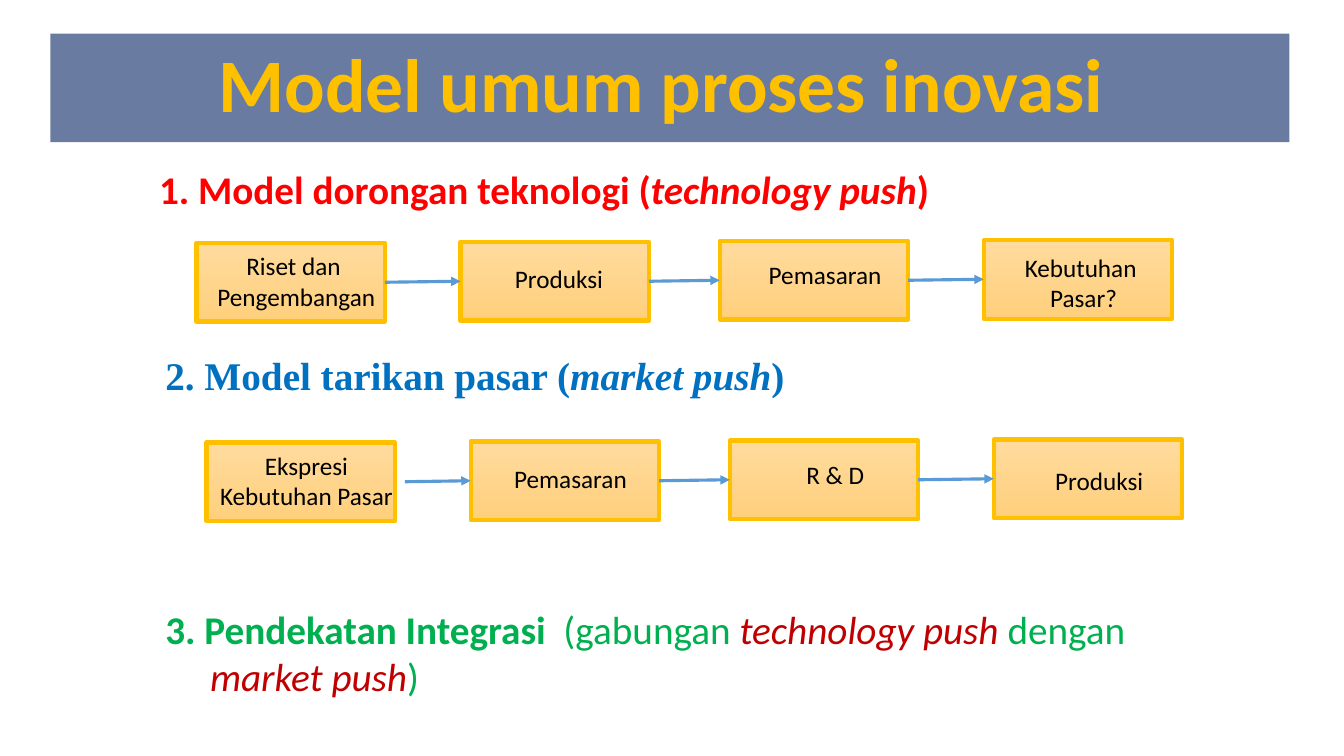
from lxml.etree import SubElement
from pptx import Presentation
from pptx.dml.color import RGBColor
from pptx.enum.shapes import MSO_CONNECTOR, MSO_SHAPE
from pptx.enum.text import MSO_ANCHOR, PP_ALIGN
from pptx.oxml.ns import qn
from pptx.util import Pt

NAVY = RGBColor(0x00, 0x20, 0x60)
GOLD = RGBColor(0xFF, 0xC0, 0x00)
CREAM = RGBColor(0xFF, 0xDB, 0x9E)
AMBER = RGBColor(0xFF, 0xD0, 0x7C)
SKY = RGBColor(0x5B, 0x9B, 0xD5)
BLACK = RGBColor(0, 0, 0)
RED = RGBColor(0xFF, 0, 0)
BLUE = RGBColor(0x00, 0x70, 0xC0)
GREEN = RGBColor(0x00, 0xB0, 0x50)
MAROON = RGBColor(0xC0, 0, 0)

# Content: headings are (left, top, width, height), font, alignment, paragraphs;
# each paragraph is (indent, runs) and each run is text, colour, bold, italic
TITLE = "Model umum proses inovasi "
HEADINGS = [
    ((106.5, 114.5, 782, 41), "Calibri", PP_ALIGN.LEFT, [
        (0, [("1. Model dorongan teknologi (", RED, True, False),
             ("technology push", RED, True, True),
             (")", RED, True, False)])]),
    ((111, 247.7, 477, 41), "Times New Roman", PP_ALIGN.LEFT, [
        (0, [("2. Model tarikan pasar (", BLUE, True, False),
             ("market push", BLUE, True, True),
             (")", BLUE, True, False)])]),
    ((111, 429, 734, 75), "Calibri", PP_ALIGN.JUSTIFY, [
        (0, [("3. Pendekatan Integrasi  ", GREEN, True, False),
             ("(gabungan ", GREEN, False, False),
             ("technology push ", MAROON, False, True),
             ("dengan", GREEN, False, False)]),
        (32, [("market push", MAROON, False, True),
              (")", GREEN, False, False)])]),
]
# Each flow: left, top, gap before its first arrow, steps;
# each step is text and its offset from the box centre
FLOWS = [
    (140.4, 173.5, 0, [("Riset dan \nPengembangan", 4, -1), ("Produksi", 3, -2),
                       ("Pemasaran", 8, -4), ("Kebutuhan \nPasar?", 4, 2)]),
    (147.6, 316, 7, [("Ekspresi\nKebutuhan Pasar", 4, -1), ("Pemasaran", 4, -2),
                     ("R & D", 8, -4), ("Produksi", 8, 1)]),
]
STEP_X = [0, 188.6, 373.7, 562.3]
RISE = 0.7
BOX_W, BOX_H = 134.6, 56.2


def add_heading(s, frame, font, align, paragraphs):
    tf = s.shapes.add_textbox(*map(Pt, frame)).text_frame
    tf.word_wrap = True
    for i, (indent, runs) in enumerate(paragraphs):
        p = tf.add_paragraph() if i else tf.paragraphs[0]
        p.alignment = align
        if indent:
            p._p.get_or_add_pPr().set("marL", str(Pt(indent)))
        for text, color, bold, italic in runs:
            r = p.add_run()
            r.text = text
            r.font.name, r.font.size = font, Pt(28)
            r.font.bold, r.font.italic = bold, italic
            r.font.color.rgb = color


def add_step(s, x, y, text, dx, dy):
    sp = s.shapes.add_shape(MSO_SHAPE.RECTANGLE, Pt(x), Pt(y), Pt(BOX_W), Pt(BOX_H))
    sp.shadow.inherit = False
    sp.fill.gradient()
    sp.fill.gradient_angle = 270
    for stop, color in zip(sp.fill.gradient_stops, (CREAM, AMBER)):
        stop.color.rgb = color
    sp.line.color.rgb, sp.line.width = GOLD, Pt(3)
    # An inset of twice the offset moves centred text by the offset
    tf = sp.text_frame
    tf.text = text
    tf.word_wrap = False
    tf.vertical_anchor = MSO_ANCHOR.MIDDLE
    tf.margin_left, tf.margin_right = Pt(2 * dx), 0
    tf.margin_top, tf.margin_bottom = Pt(max(2 * dy, 0)), Pt(max(-2 * dy, 0))
    for p in tf.paragraphs:
        p.alignment = PP_ALIGN.CENTER
        for r in p.runs:
            r.font.name, r.font.size = "Calibri", Pt(18)
            r.font.color.rgb = BLACK
    return sp


def add_arrow(s, start, end, gap):
    line = s.shapes.add_connector(
        MSO_CONNECTOR.STRAIGHT, start.left + start.width + Pt(gap),
        start.top + start.height // 2, end.left, end.top + end.height // 2)
    if not gap:
        line.begin_connect(start, 3)
    line.end_connect(end, 1)
    line.line.color.rgb, line.line.width = SKY, Pt(2.25)
    SubElement(line.line._get_or_add_ln(), qn("a:tailEnd"), type="triangle")
    SubElement(line._element.spPr, qn("a:effectLst"))


prs = Presentation()
prs.slide_width, prs.slide_height = Pt(960), Pt(540)
s = prs.slides.add_slide(prs.slide_layouts[5])

# Title band
title = s.shapes.title
title.left, title.top, title.width, title.height = map(Pt, (36, 24, 885, 77.5))
title.fill.solid()
title.fill.fore_color.rgb = NAVY
SubElement(title.fill._xPr.find(qn("a:solidFill"))[0], qn("a:alpha"), val="59000")
tf = title.text_frame
tf.text = TITLE
tf.vertical_anchor = MSO_ANCHOR.MIDDLE
p = tf.paragraphs[0]
p.alignment, p.line_spacing = PP_ALIGN.CENTER, 0.9
r = p.runs[0]
r.font.name, r.font.size, r.font.bold = "Calibri", Pt(54), True
r.font.color.rgb = GOLD

# Headings
for heading in HEADINGS:
    add_heading(s, *heading)

# Flows of boxes and arrows
for left, top, first_gap, steps in FLOWS:
    boxes = [add_step(s, left + x, top - RISE * i, *step)
             for i, (x, step) in enumerate(zip(STEP_X, steps))]
    for i, (start, end) in enumerate(zip(boxes, boxes[1:])):
        add_arrow(s, start, end, 0 if i else first_gap)

prs.save("out.pptx")
